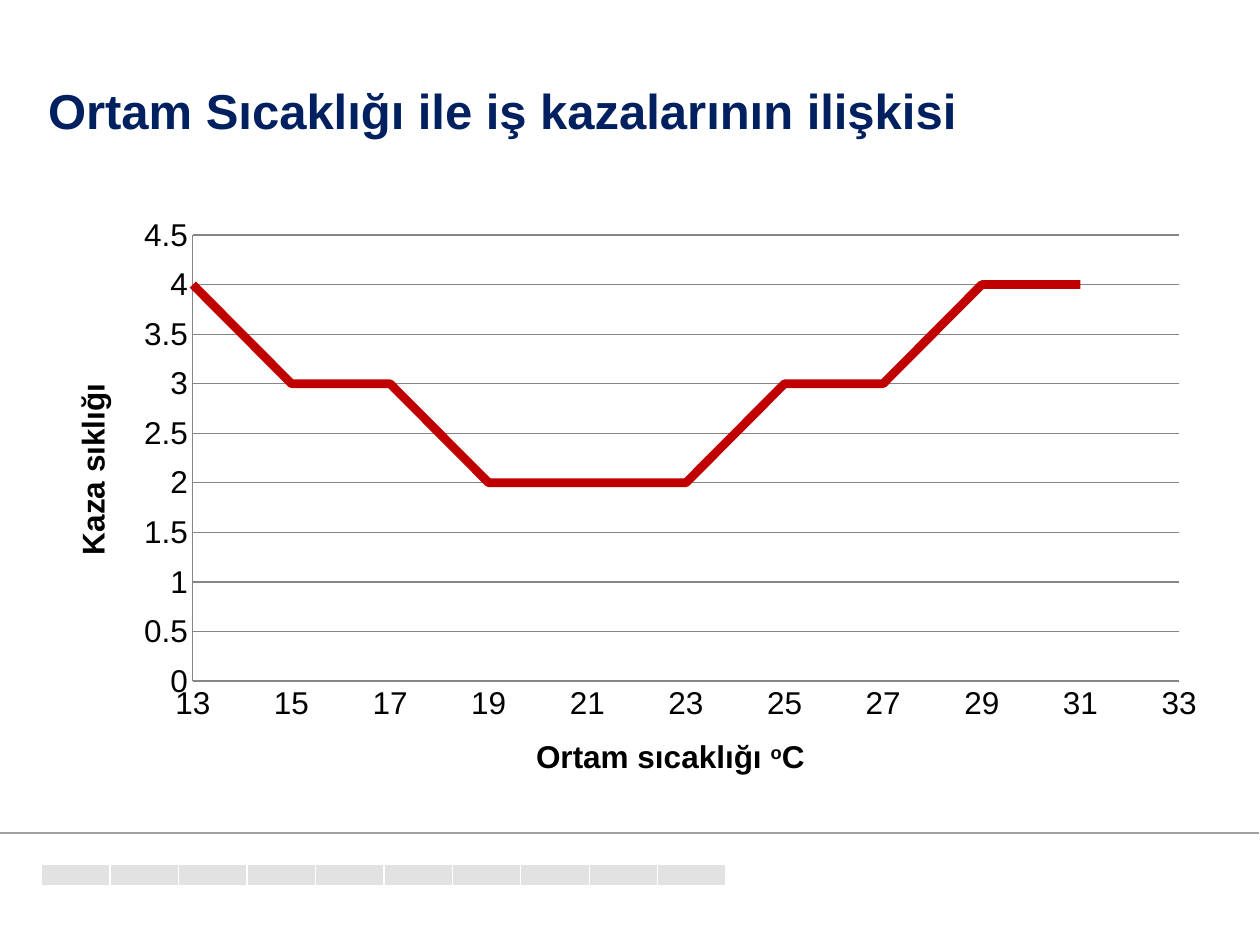
import pptx
import pptx.chart.data
import pptx.dml.color
import pptx.enum.chart
import pptx.enum.shapes
import pptx.enum.text
import pptx.oxml
import pptx.oxml.ns
import pptx.util
from pptx.util import Cm, Pt

TITLE = "Ortam Sıcaklığı ile iş kazalarının ilişkisi"
X_TITLE = [("Ortam sıcaklığı ", False), ("o", True), ("C", False)]
Y_TITLE = [("Kaza sıklığı", False)]
TEMPERATURES = range(13, 32, 2)
FREQUENCIES = [4, 3, 3, 2, 2, 2, 3, 3, 4, 4]
PLOT_AREA = {"x": 0.13, "y": 0.05, "w": 0.84, "h": 0.75}
COLORS = {"title": "002060", "text": "000000", "curve": "C00000", "axis": "868686",
          "block": "E2E2E2", "white": "FFFFFF", "rule": "9F9F9F"}
FONT = "Arial"
BLOCKS = 10
BLOCK_LEFT, BLOCK_TOP, BLOCK_WIDTH, BLOCK_HEIGHT = 0.84, 17.42, 1.38, 0.43
RULE_TOP = 16.79


def rgb(name):
    return pptx.dml.color.RGBColor.from_string(COLORS[name])


def style_font(font, size, color, bold):
    font.name = FONT
    font.size = Pt(size)
    font.bold = bold
    font.color.rgb = rgb(color)


def style_line(line, color, width):
    line.color.rgb = rgb(color)
    line.width = Pt(width)


def add_footer(s):
    for i in range(BLOCKS):
        block = s.shapes.add_shape(
            pptx.enum.shapes.MSO_SHAPE.RECTANGLE, Cm(BLOCK_LEFT + i * BLOCK_WIDTH),
            Cm(BLOCK_TOP), Cm(BLOCK_WIDTH), Cm(BLOCK_HEIGHT))
        block.shadow.inherit = False
        block.fill.solid()
        block.fill.fore_color.rgb = rgb("block")
        style_line(block.line, "white", 0.75)
    rule = s.shapes.add_connector(
        pptx.enum.shapes.MSO_CONNECTOR.STRAIGHT, Cm(0), Cm(RULE_TOP), Cm(25.37), Cm(RULE_TOP))
    style_line(rule.line, "rule", 0.75)
    rule._element.spPr.append(pptx.oxml.parse_xml(
        f'<a:effectLst {pptx.oxml.ns.nsdecls("a")}/>'))


def add_title(s):
    title = s.shapes.title
    title.left, title.top, title.width, title.height = Cm(0.97), Cm(1.63), Cm(22.86), Cm(2)
    tf = title.text_frame
    tf.text = TITLE
    tf.word_wrap = True
    tf.auto_size = pptx.enum.text.MSO_AUTO_SIZE.NONE
    tf.vertical_anchor = pptx.enum.text.MSO_ANCHOR.TOP
    tf.margin_left = tf.margin_right = 0
    p = tf.paragraphs[0]
    p.alignment = pptx.enum.text.PP_ALIGN.LEFT
    p.line_spacing = 0.9
    style_font(p.runs[0].font, 28, "title", True)


def format_axis(axis, title, low, high, step):
    axis.minimum_scale, axis.maximum_scale, axis.major_unit = low, high, step
    axis.major_tick_mark = axis.minor_tick_mark = pptx.enum.chart.XL_TICK_MARK.NONE
    style_line(axis.format.line, "axis", 0.75)
    style_font(axis.tick_labels.font, 18, "text", False)
    axis.tick_labels.number_format = "General"
    axis.tick_labels.number_format_is_linked = False
    p = axis.axis_title.text_frame.paragraphs[0]
    for text, raised in title:
        r = p.add_run()
        r.text = text
        style_font(r.font, 18, "text", True)
        if raised:
            r._r.get_or_add_rPr().set("baseline", "30000")


def set_plot_area(chart):
    area = chart._chartSpace.chart.plotArea
    for layout in area.findall(pptx.oxml.ns.qn("c:layout")):
        area.remove(layout)
    modes = '<c:layoutTarget val="inner"/><c:xMode val="edge"/><c:yMode val="edge"/>'
    sizes = "".join(f'<c:{key} val="{value}"/>' for key, value in PLOT_AREA.items())
    area.insert(0, pptx.oxml.parse_xml(
        f'<c:layout {pptx.oxml.ns.nsdecls("c")}><c:manualLayout>{modes}{sizes}'
        '</c:manualLayout></c:layout>'))


def add_accident_chart(s):
    data = pptx.chart.data.XyChartData()
    series = data.add_series("Series 1")
    for x, y in zip(TEMPERATURES, FREQUENCIES):
        series.add_data_point(x, y)
    chart = s.shapes.add_chart(
        pptx.enum.chart.XL_CHART_TYPE.XY_SCATTER_SMOOTH_NO_MARKERS,
        Cm(0.81), Cm(4.14), Cm(23.67), Cm(11.99), data).chart
    chart.has_legend = chart.has_title = False
    style_font(chart.font, 18, "text", False)
    plot = chart.plots[0]
    plot.vary_by_categories = False
    curve = plot.series[0]
    curve.smooth = True
    curve.marker.style = pptx.enum.chart.XL_MARKER_STYLE.NONE
    style_line(curve.format.line, "curve", 5)
    format_axis(chart.category_axis, X_TITLE, 13, 33, 2)
    format_axis(chart.value_axis, Y_TITLE, 0, 4.5, 0.5)
    chart.category_axis.has_major_gridlines = False
    chart.value_axis.has_major_gridlines = True
    style_line(chart.value_axis.major_gridlines.format.line, "axis", 0.75)
    set_plot_area(chart)


def main():
    prs = pptx.Presentation()
    prs.slide_width, prs.slide_height = Cm(25.4), Cm(19.05)
    s = prs.slides.add_slide(prs.slide_layouts[5])
    add_footer(s)
    add_title(s)
    add_accident_chart(s)
    prs.save("out.pptx")


if __name__ == "__main__":
    main()
